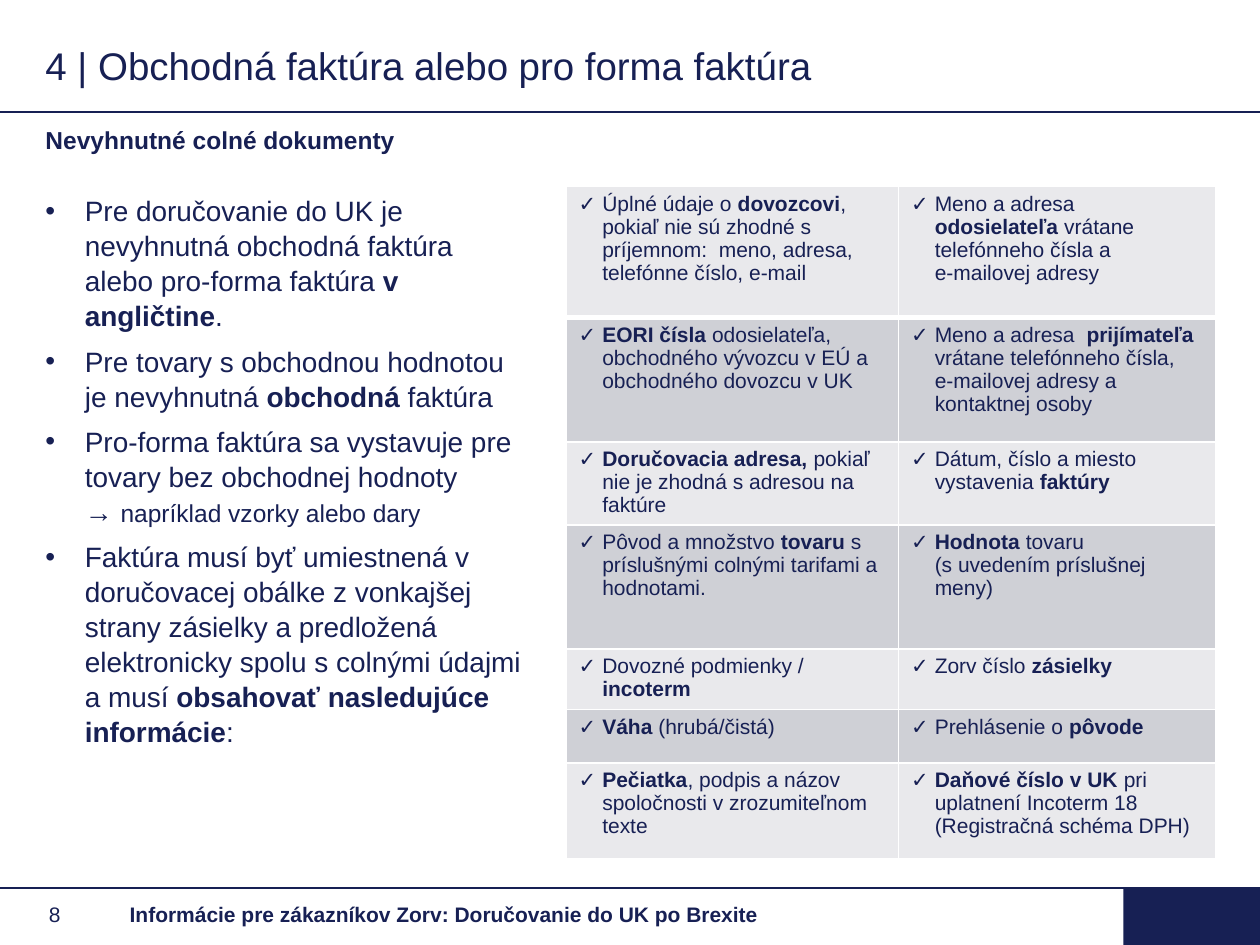
from lxml.etree import SubElement
from pptx import Presentation
from pptx.dml.color import RGBColor
from pptx.enum.shapes import MSO_CONNECTOR, MSO_SHAPE
from pptx.enum.text import MSO_ANCHOR, MSO_AUTO_SIZE, PP_ALIGN
from pptx.oxml.ns import qn
from pptx.util import Pt

NAVY = "172054"
WHITE = "FFFFFF"
ROW_FILLS = ("E9E9EC", "CFD0D6")
COLUMN_WIDTHS = (190, 181)
ROW_HEIGHTS = (75, 71, 47.5, 71, 34.5, 30.5, 55)

POINTS = [
    "Pre doručovanie do UK je nevyhnutná obchodná faktúra alebo pro-forma faktúra **v angličtine**.",
    "Pre tovary s obchodnou hodnotou je nevyhnutná **obchodná** faktúra",
    "Pro-forma faktúra sa vystavuje pre tovary bez obchodnej hodnoty\n→ ^napríklad vzorky alebo dary^",
    "Faktúra musí byť umiestnená v doručovacej obálke z vonkajšej strany zásielky a predložená "
    "elektronicky spolu s colnými údajmi a musí **obsahovať nasledujúce informácie**:",
]
REQUIREMENTS = [
    ("Úplné údaje o **dovozcovi**, pokiaľ nie sú zhodné s príjemnom:  meno, adresa, telefónne číslo, e-mail",
     "Meno a adresa **odosielateľa** vrátane telefónneho čísla a\ne-mailovej adresy"),
    ("**EORI čísla **odosielateľa, obchodného vývozcu v EÚ a obchodného dovozcu v UK",
     "Meno a adresa  **prijímateľa** vrátane telefónneho čísla,\ne-mailovej adresy a kontaktnej osoby"),
    ("**Doručovacia adresa, **pokiaľ nie je zhodná s adresou na faktúre",
     "Dátum, číslo a miesto vystavenia **faktúry**"),
    ("Pôvod a množstvo **tovaru** s príslušnými colnými tarifami a hodnotami.",
     "**Hodnota **tovaru\n(s uvedením príslušnej meny)"),
    ("Dovozné podmienky / **incoterm**", "Zorv číslo **zásielky**"),
    ("**Váha** (hrubá/čistá)", "Prehlásenie o **pôvode**"),
    ("**Pečiatka**, podpis a názov spoločnosti v zrozumiteľnom texte",
     "**Daňové číslo v UK **pri uplatnení Incoterm 18 (Registračná schéma DPH)"),
]


def color(value):
    """Turn a hex string into a colour."""
    return RGBColor.from_string(value)


def add_bullet(paragraph, character, indent):
    """Give a paragraph a hanging bullet."""
    properties = paragraph._p.get_or_add_pPr()
    properties.set("marL", str(Pt(indent)))
    properties.set("indent", str(-Pt(indent)))
    SubElement(properties, qn("a:buFont")).set("typeface", "Arial")
    SubElement(properties, qn("a:buChar")).set("char", character)


def write_text(frame, texts, size=12, small=14, bullet=None, indent=0, space_before=0, line_spacing=1.0):
    """Write paragraphs in which ** toggles bold and ^ toggles the small size."""
    for index, text in enumerate(texts):
        paragraph = frame.add_paragraph() if index else frame.paragraphs[0]
        if bullet:
            add_bullet(paragraph, bullet, indent)
        paragraph.alignment = PP_ALIGN.LEFT
        paragraph.space_before = Pt(space_before if index else 0)
        paragraph.line_spacing = line_spacing
        for part_index, part in enumerate(text.split("**")):
            for piece_index, piece in enumerate(part.split("^")):
                for line_index, line in enumerate(piece.split("\n")):
                    if line_index:
                        paragraph.add_line_break()
                    if line:
                        run = paragraph.add_run()
                        run.text = line
                        run.font.name = "Arial"
                        run.font.size = Pt(small if piece_index % 2 else size)
                        run.font.bold = part_index % 2 == 1
                        run.font.color.rgb = color(NAVY)


def fill_box(shape, box, texts, anchor=MSO_ANCHOR.TOP, inset=0, **text_format):
    """Place a text shape in a box and write its text."""
    shape.left, shape.top, shape.width, shape.height = map(Pt, box)
    frame = shape.text_frame
    frame.word_wrap = True
    frame.auto_size = MSO_AUTO_SIZE.NONE
    frame.vertical_anchor = anchor
    frame.margin_left, frame.margin_right = Pt(inset), Pt(7.2)
    frame.margin_top = frame.margin_bottom = Pt(3.6)
    write_text(frame, texts, **text_format)


def add_rule(slide, top, width):
    """Draw a horizontal rule from the left edge."""
    rule = slide.shapes.add_connector(MSO_CONNECTOR.STRAIGHT, 0, Pt(top), Pt(width), Pt(top))
    rule.line.color.rgb = color(NAVY)
    rule.line.width = Pt(1)
    SubElement(rule._element.spPr, qn("a:effectLst"))


def add_header(slide, box):
    """Place the title, its rule and the subtitle."""
    left, top, width, height = box
    add_rule(slide, top + 44, 720)
    fill_box(slide.shapes.title, (left, top, width, 34), ["4 | Obchodná faktúra alebo pro forma faktúra"],
             anchor=MSO_ANCHOR.MIDDLE, size=22)
    fill_box(slide.placeholders[1], (left, top + height - 18, width, 18),
             ["**Nevyhnutné colné dokumenty**"], size=14)


def add_footer(slide, box):
    """Place the footer rule, corner block, page number and footer text."""
    left, top, width, height = box
    add_rule(slide, top, width)
    block = slide.shapes.add_shape(MSO_SHAPE.RECTANGLE, Pt(left + width - 78), Pt(top), Pt(78), Pt(height))
    block.shadow.inherit = False
    block.fill.solid()
    block.fill.fore_color.rgb = color(NAVY)
    block.line.fill.background()
    labels = [
        (28, 39, 0, "8"),
        (67, 428, 7.2, "**Informácie pre zákazníkov Zorv: Doručovanie do UK po Brexite**"),
    ]
    for offset, label_width, inset, text in labels:
        label_box = (left + offset, top + 5.8, label_width, 18)
        label = slide.shapes.add_textbox(*map(Pt, label_box))
        fill_box(label, label_box, [text], anchor=MSO_ANCHOR.MIDDLE, inset=inset)


def set_border(cell, side, width):
    """Draw a white border on one side of a cell."""
    border = SubElement(cell._tc.get_or_add_tcPr(), qn(f"a:ln{side}"), w=str(Pt(width)))
    fill = SubElement(border, qn("a:solidFill"))
    SubElement(fill, qn("a:srgbClr")).set("val", WHITE)


def add_requirements(slide, box):
    """Place the checklist table."""
    table = slide.shapes.add_table(len(REQUIREMENTS), 2, *map(Pt, box)).table
    table.first_row = table.horz_banding = False
    for column, width in zip(table.columns, COLUMN_WIDTHS):
        column.width = Pt(width)
    for row_index, texts in enumerate(REQUIREMENTS):
        table.rows[row_index].height = Pt(ROW_HEIGHTS[row_index])
        for column_index, text in enumerate(texts):
            cell = table.cell(row_index, column_index)
            for side in "LRTB":
                thick = (row_index, side) in ((0, "B"), (1, "T"))
                set_border(cell, side, 3 if thick else 1)
            cell.fill.solid()
            cell.fill.fore_color.rgb = color(ROW_FILLS[row_index % 2])
            write_text(cell.text_frame, [text], bullet="✓", indent=13.5, line_spacing=0.98)


def build():
    """Build and save the presentation."""
    presentation = Presentation()
    presentation.slide_width, presentation.slide_height = Pt(720), Pt(540)
    slide = presentation.slides.add_slide(presentation.slide_layouts[4])
    for index in (2, 4):
        unused = slide.placeholders[index]._element
        unused.getparent().remove(unused)
    add_header(slide, (26, 20, 669, 66))
    fill_box(slide.placeholders[3], (26, 106.5, 280, 376.5), POINTS,
             size=16, bullet="•", indent=22.5, space_before=6, line_spacing=1.04)
    add_requirements(slide, (323.5, 106.5, sum(COLUMN_WIDTHS), sum(ROW_HEIGHTS)))
    add_footer(slide, (0, 507.5, 720, 32.5))
    presentation.save("out.pptx")


if __name__ == "__main__":
    build()
